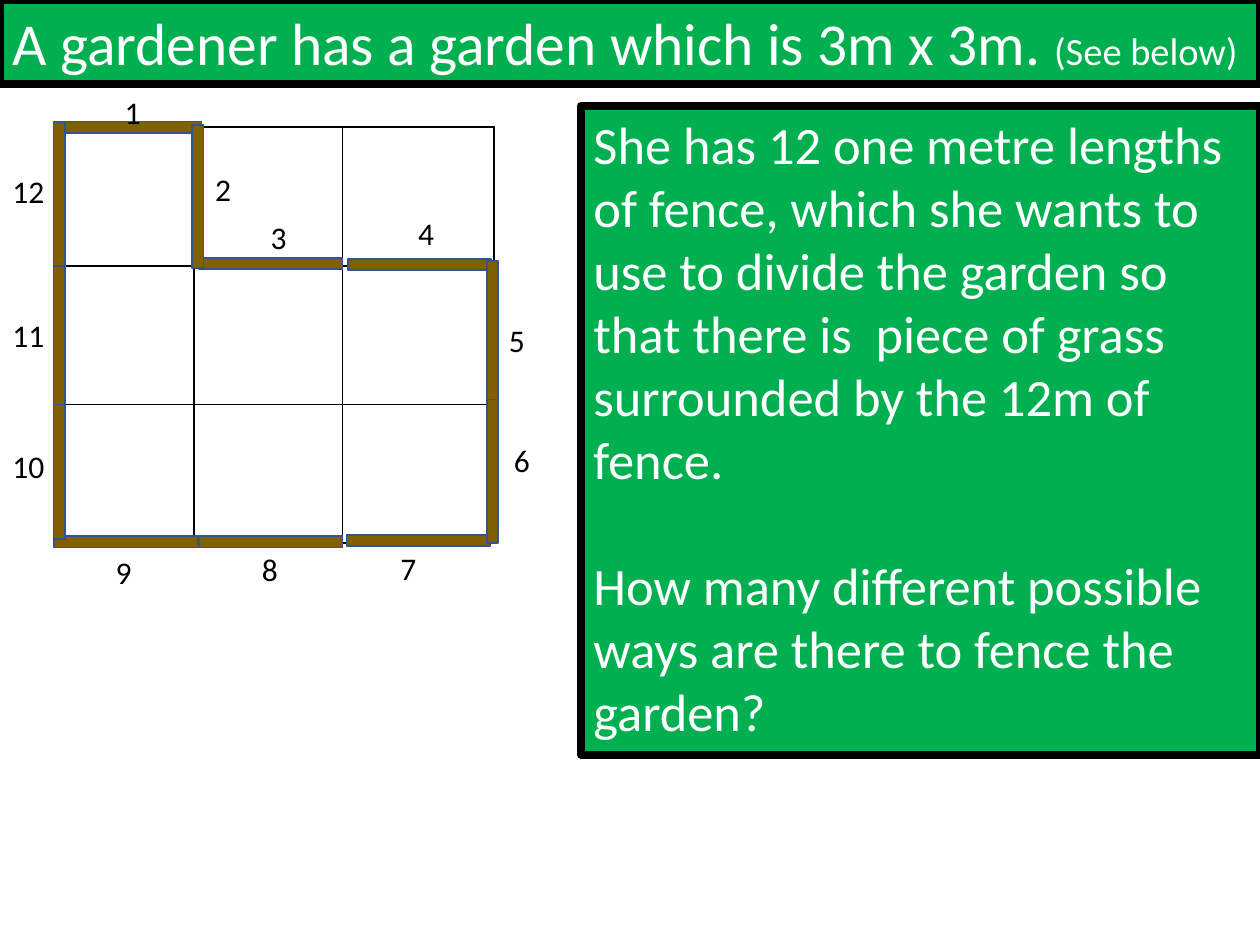
from lxml import etree
from pptx import Presentation
from pptx.dml.color import RGBColor
from pptx.enum.shapes import MSO_SHAPE
from pptx.enum.text import MSO_ANCHOR, MSO_AUTO_SIZE, PP_ALIGN
from pptx.oxml.ns import qn
from pptx.util import Inches, Pt

RECTANGLE = MSO_SHAPE.RECTANGLE
TOP, MIDDLE = MSO_ANCHOR.TOP, MSO_ANCHOR.MIDDLE
NO_FIT = MSO_AUTO_SIZE.NONE
LEFT = PP_ALIGN.LEFT

GREEN, BROWN, BLUE = "00B050", "806000", "325491"
WHITE, BLACK = "FFFFFF", "000000"
ACROSS, DOWN = 0, 90
PANEL_LENGTH, PANEL_WIDTH = 1.14, 0.09
GARDEN_COLUMNS = (1.09, 1.18, 1.2)
GARDEN_ROWS = (1.1, 1.1, 1.1)

# Panels in number order: centre x, centre y, direction, label left, label top
FENCE = [
    (1.03, 1.01, ACROSS, 0.89, 0.69),
    (1.57, 1.56, DOWN, 1.61, 1.3),
    (2.15, 2.09, ACROSS, 2.05, 1.68),
    (3.33, 2.1, ACROSS, 3.22, 1.65),
    (3.91, 2.64, DOWN, 3.94, 2.5),
    (3.91, 3.74, DOWN, 3.98, 3.45),
    (3.32, 4.29, ACROSS, 3.08, 4.31),
    (2.15, 4.3, ACROSS, 1.98, 4.32),
    (1, 4.3, ACROSS, 0.82, 4.34),
    (0.47, 3.71, DOWN, 0, 3.5),
    (0.47, 2.64, DOWN, 0, 2.46),
    (0.47, 1.54, DOWN, 0, 1.32),
]


def colour(hex_text):
    return RGBColor.from_string(hex_text)


def set_values(target, values):
    for name, value in values.items():
        setattr(target, name, value)


def paint(shape, fill, line, line_width):
    shape.fill.solid()
    shape.fill.fore_color.rgb = colour(fill)
    shape.line.color.rgb = colour(line)
    shape.line.width = Pt(line_width)


def add_run(paragraph, text, size, text_colour):
    run = paragraph.add_run()
    run.text = text
    set_values(run.font, {"name": "Calibri", "size": Pt(size)})
    run.font.color.rgb = colour(text_colour)


def fill_panel(placeholder, box, anchor, paragraphs, gap=0):
    """Turn a placeholder into a green panel; paragraphs are lists of (text, size)."""
    left, top, width, height = map(Inches, box)
    set_values(placeholder, {"left": left, "top": top, "width": width, "height": height})
    paint(placeholder, GREEN, BLACK, 4.5)
    frame = placeholder.text_frame
    set_values(frame, {"word_wrap": True, "auto_size": NO_FIT, "vertical_anchor": anchor})
    for index, runs in enumerate(paragraphs):
        paragraph = frame.add_paragraph() if index else frame.paragraphs[0]
        set_values(paragraph, {"alignment": LEFT, "space_before": Pt(gap if index else 0)})
        properties = paragraph._p.get_or_add_pPr()
        properties.set("marL", "0")
        properties.set("indent", "0")
        etree.SubElement(properties, qn("a:buNone"))
        for text, size in runs:
            add_run(paragraph, text, size, WHITE)


def add_borders(cell):
    properties = cell._tc.get_or_add_tcPr()
    for index, side in enumerate(("lnL", "lnR", "lnT", "lnB")):
        line = etree.Element(qn(f"a:{side}"), w=str(Pt(1)))
        fill = etree.SubElement(line, qn("a:solidFill"))
        etree.SubElement(fill, qn("a:srgbClr"), val=BLACK)
        properties.insert(index, line)


def add_garden(slide):
    frame = slide.shapes.add_table(
        len(GARDEN_ROWS), len(GARDEN_COLUMNS), Inches(0.45), Inches(1.01),
        Inches(sum(GARDEN_COLUMNS)), Inches(sum(GARDEN_ROWS)))
    table = frame.table
    set_values(table, {"first_row": False, "horz_banding": False})
    for column, width in zip(table.columns, GARDEN_COLUMNS):
        column.width = Inches(width)
    for row, height in zip(table.rows, GARDEN_ROWS):
        row.height = Inches(height)
    for cell in table.iter_cells():
        cell.fill.solid()
        cell.fill.fore_color.rgb = colour(WHITE)
        add_borders(cell)


def add_fence_panel(slide, centre_x, centre_y, direction):
    panel = slide.shapes.add_shape(
        RECTANGLE, Inches(centre_x - PANEL_LENGTH / 2), Inches(centre_y - PANEL_WIDTH / 2),
        Inches(PANEL_LENGTH), Inches(PANEL_WIDTH))
    panel.rotation = direction
    panel.shadow.inherit = False
    paint(panel, BROWN, BLUE, 1)


def add_label(slide, text, left, top):
    width = 0.29 if len(text) == 1 else 0.47
    box = slide.shapes.add_textbox(Inches(left), Inches(top), Inches(width), Inches(0.4))
    box.text_frame.word_wrap = False
    add_run(box.text_frame.paragraphs[0], text, 18, BLACK)


def main():
    presentation = Presentation()
    set_values(presentation, {"slide_width": Inches(10), "slide_height": Inches(7.5)})
    slide = presentation.slides.add_slide(presentation.slide_layouts[1])

    fill_panel(slide.shapes.title, (0, 0, 10, 0.67), MIDDLE, [
        [("A gardener has a garden which is 3m x 3m. ", 34), ("(See below)", 22)]])
    fill_panel(slide.placeholders[1], (4.61, 0.84, 5.39, 5.15), TOP, [
        [("She has 12 one metre lengths of fence, which she wants to use to divide "
          "the garden so that there is  piece of grass surrounded by the 12m of fence.", 30)],
        [("How many different possible ways are there to fence the garden?", 30)],
    ], gap=36)

    add_garden(slide)
    for centre_x, centre_y, direction, *_ in sorted(FENCE, key=lambda panel: panel[2]):
        add_fence_panel(slide, centre_x, centre_y, direction)
    for number, (*_, left, top) in enumerate(FENCE, start=1):
        add_label(slide, str(number), left, top)

    presentation.save("out.pptx")


if __name__ == "__main__":
    main()
